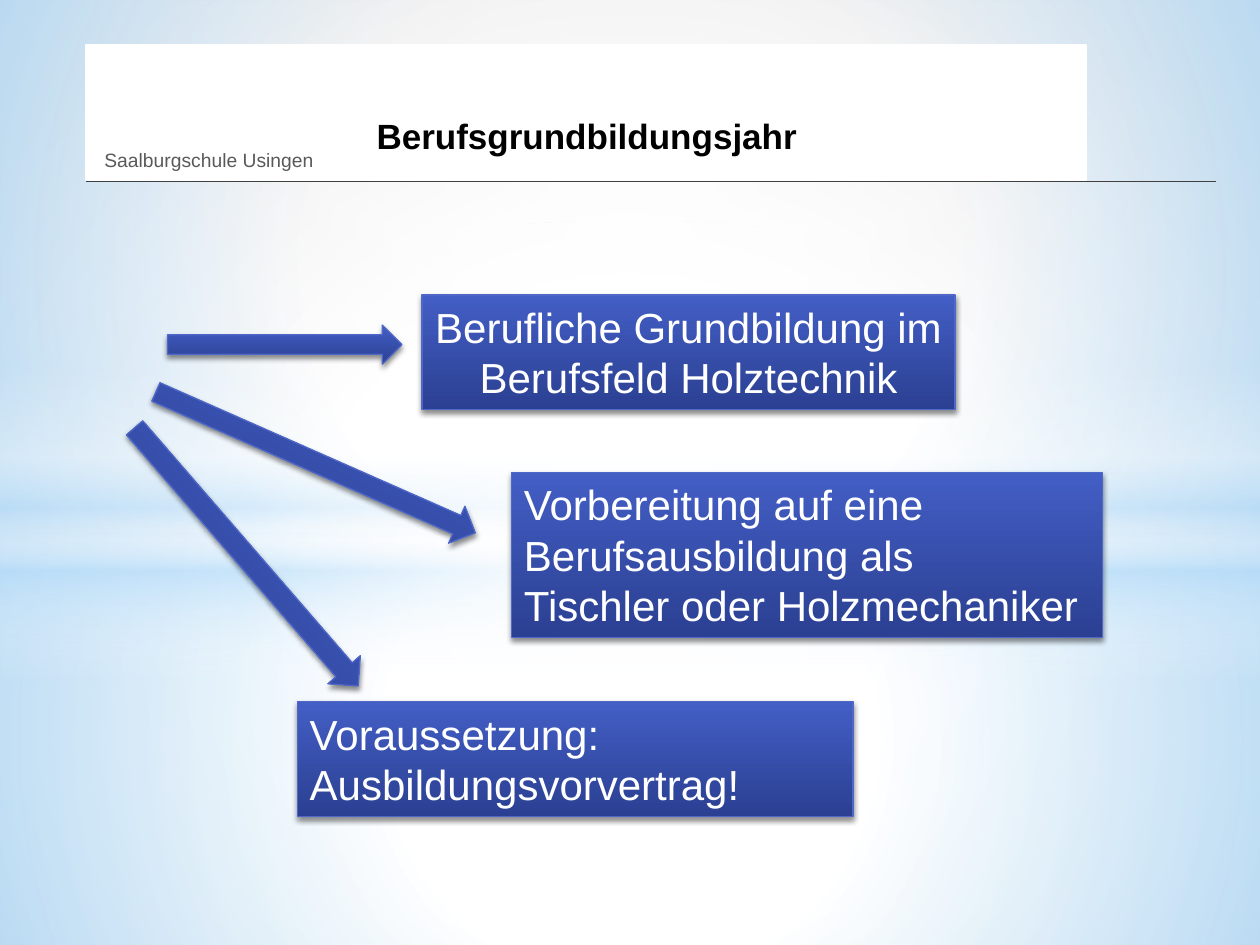
import lxml.etree
import pptx
import pptx.dml.color
import pptx.enum.shapes
import pptx.enum.text
import pptx.oxml
import pptx.oxml.ns
import pptx.util

Inches = pptx.util.Inches
SHAPES = pptx.enum.shapes.MSO_SHAPE
ALIGN = pptx.enum.text.PP_ALIGN
qn = pptx.oxml.ns.qn
NAMESPACE = pptx.oxml.ns.nsdecls("a")
CENTER = (50, 50, 50, 50)
BLUE_STOPS = [(0, "435EC5", 100), (100, "2B4092", 100)]


def color(value):
    """Return a colour from its hex string."""
    return pptx.dml.color.RGBColor.from_string(value)


def set_gradient(fill, properties, stops, angle=90, focus=None):
    """Fill with a linear gradient, or a circular one around a focus box."""
    fill.solid()
    stop_xml = "".join(
        f'<a:gs pos="{position * 1000}"><a:srgbClr val="{value}">'
        f'<a:alpha val="{opacity * 1000}"/></a:srgbClr></a:gs>'
        for position, value, opacity in stops
    )
    if focus:
        sides = " ".join(f'{side}="{share * 1000}"' for side, share in zip("ltrb", focus))
        direction = f'<a:path path="circle"><a:fillToRect {sides}/></a:path>'
    else:
        direction = f'<a:lin ang="{angle * 60000}" scaled="0"/>'
    gradient = pptx.oxml.parse_xml(
        f'<a:gradFill {NAMESPACE} rotWithShape="1"><a:gsLst>{stop_xml}</a:gsLst>{direction}</a:gradFill>'
    )
    properties.replace(properties.find(qn("a:solidFill")), gradient)


def add_shape(slide, kind, box):
    """Add a preset shape without line or shadow."""
    shape = slide.shapes.add_shape(kind, *map(Inches, box))
    shape.shadow.inherit = False
    shape.line.fill.background()
    return shape


def write_text(shape, text, size=24, font_color="FFFFFF", bold=False, align=ALIGN.LEFT, wrap=True):
    """Write one formatted paragraph into a shape."""
    frame = shape.text_frame
    frame.word_wrap = wrap
    frame.vertical_anchor = pptx.enum.text.MSO_ANCHOR.TOP
    paragraph = frame.paragraphs[0]
    paragraph.text = text
    paragraph.alignment = align
    for run in paragraph.runs:
        run.font.name = "Arial"
        run.font.size = pptx.util.Pt(size)
        run.font.bold = bold
        run.font.color.rgb = color(font_color)


def add_blue_shape(slide, kind, box, rotation=0):
    """Add a blue gradient shape with a soft shadow."""
    shape = add_shape(slide, kind, box)
    properties = shape.element.spPr
    set_gradient(shape.fill, properties, BLUE_STOPS)
    shape.line.color.rgb = color("4E67C8")
    shape.line.width = pptx.util.Pt(0.75)
    shape.rotation = rotation
    properties.find(qn("a:effectLst")).append(pptx.oxml.parse_xml(
        f'<a:outerShdw {NAMESPACE} blurRad="{pptx.util.Pt(3.1)}" dist="{pptx.util.Pt(1.8)}" '
        'dir="5400000" algn="ctr" rotWithShape="0"><a:srgbClr val="000000">'
        '<a:alpha val="45000"/></a:srgbClr></a:outerShdw>'
    ))
    return shape


def add_backdrop(slide, width, height):
    """Paint the background and its layers of light."""
    fill = slide.background.fill
    fill.solid()
    set_gradient(fill, slide.element.find(".//" + qn("p:bgPr")),
                 [(0, "FFFFFF", 100), (42, "FFFFFF", 100), (100, "D1D1D1", 100)],
                 focus=(24, 44, 24, 12))
    horizon = 4.23
    layers = [
        (SHAPES.RECTANGLE, (0, horizon, width, height - horizon), CENTER,
         [(0, "FFFFFF", 91), (37, "FFFFFF", 76), (100, "B4DCFA", 79)]),
        (SHAPES.RECTANGLE, (0, 0, width, horizon), CENTER,
         [(0, "FFFFFF", 89), (48, "FFFFFF", 62), (100, "B4DCFA", 79)]),
        (SHAPES.RECTANGLE, (0, 2.9, width, 2.5), None,
         [(0, "FFFFFF", 0), (29, "FFFFFF", 30), (45, "B4DCFA", 40),
          (55, "FFFFFF", 26), (65, "B4DCFA", 60), (100, "FFFFFF", 0)]),
        (SHAPES.OVAL, (0, 1.75, width, 5.58), CENTER,
         [(0, "FFFFFF", 100), (54, "FFFFFF", 0)]),
    ]
    for kind, box, focus, stops in layers:
        shape = add_shape(slide, kind, box)
        set_gradient(shape.fill, shape.element.spPr, stops, focus=focus)


def add_header(slide, left, top, width, height):
    """Add the white title band, its rule, the school and the title."""
    band = add_shape(slide, SHAPES.RECTANGLE, (left, top, width, height))
    band.fill.solid()
    band.fill.fore_color.rgb = color("FFFFFF")
    band.line.color.rgb = color("FFFFFF")
    band.line.width = pptx.util.Pt(1.25)
    rule_top = Inches(top + height + 0.01)
    rule = slide.shapes.add_connector(
        pptx.enum.shapes.MSO_CONNECTOR.STRAIGHT,
        Inches(left), rule_top, Inches(left + width + 1.03), rule_top)
    rule.line.color.rgb = color("404040")
    rule.line.width = pptx.util.Pt(0.75)
    lxml.etree.SubElement(rule.element.spPr, qn("a:effectLst"))
    school = slide.shapes.add_textbox(
        Inches(left + 0.05), Inches(top + 0.77), Inches(1.86), Inches(0.28))
    write_text(school, "Saalburgschule Usingen", size=11, font_color="595959",
               align=ALIGN.CENTER, wrap=False)
    title = slide.shapes.add_textbox(
        Inches(left + 2.21), Inches(top + 0.5), Inches(5), Inches(0.44))
    write_text(title, "Berufsgrundbildungsjahr", size=20, font_color="000000", bold=True)


def add_goals(slide, left, top):
    """Add the three statements and the arrows that lead to them."""
    statements = [
        ("Berufliche Grundbildung im Berufsfeld Holztechnik", (2.75, 0, 4.23, 0.91), ALIGN.CENTER),
        ("Voraussetzung:\vAusbildungsvorvertrag!", (1.76, 3.23, 4.41, 0.91), ALIGN.LEFT),
        ("Vorbereitung auf eine Berufsausbildung als\vTischler oder Holzmechaniker",
         (3.46, 1.41, 4.69, 1.31), ALIGN.LEFT),
    ]
    arrows = [
        ((0.73, 0.24, 1.86, 0.31), 0),
        ((0.52, 1.17, 2.77, 0.32), 23.8),
        ((0, 1.91, 2.71, 0.34), 49.1),
    ]
    for text, (x, y, width, height), align in statements:
        shape = add_blue_shape(slide, SHAPES.RECTANGLE, (left + x, top + y, width, height))
        write_text(shape, text, align=align)
    for (x, y, width, height), rotation in arrows:
        add_blue_shape(slide, SHAPES.RIGHT_ARROW, (left + x, top + y, width, height), rotation)


def main():
    """Build and save the slide."""
    presentation = pptx.Presentation()
    width, height = 10, 7.5
    presentation.slide_width = Inches(width)
    presentation.slide_height = Inches(height)
    slide = presentation.slides.add_slide(presentation.slide_layouts[6])
    add_backdrop(slide, width, height)
    add_header(slide, 0.68, 0.36, 7.94, 1.07)
    add_goals(slide, 0.6, 2.34)
    presentation.save("out.pptx")


if __name__ == "__main__":
    main()
